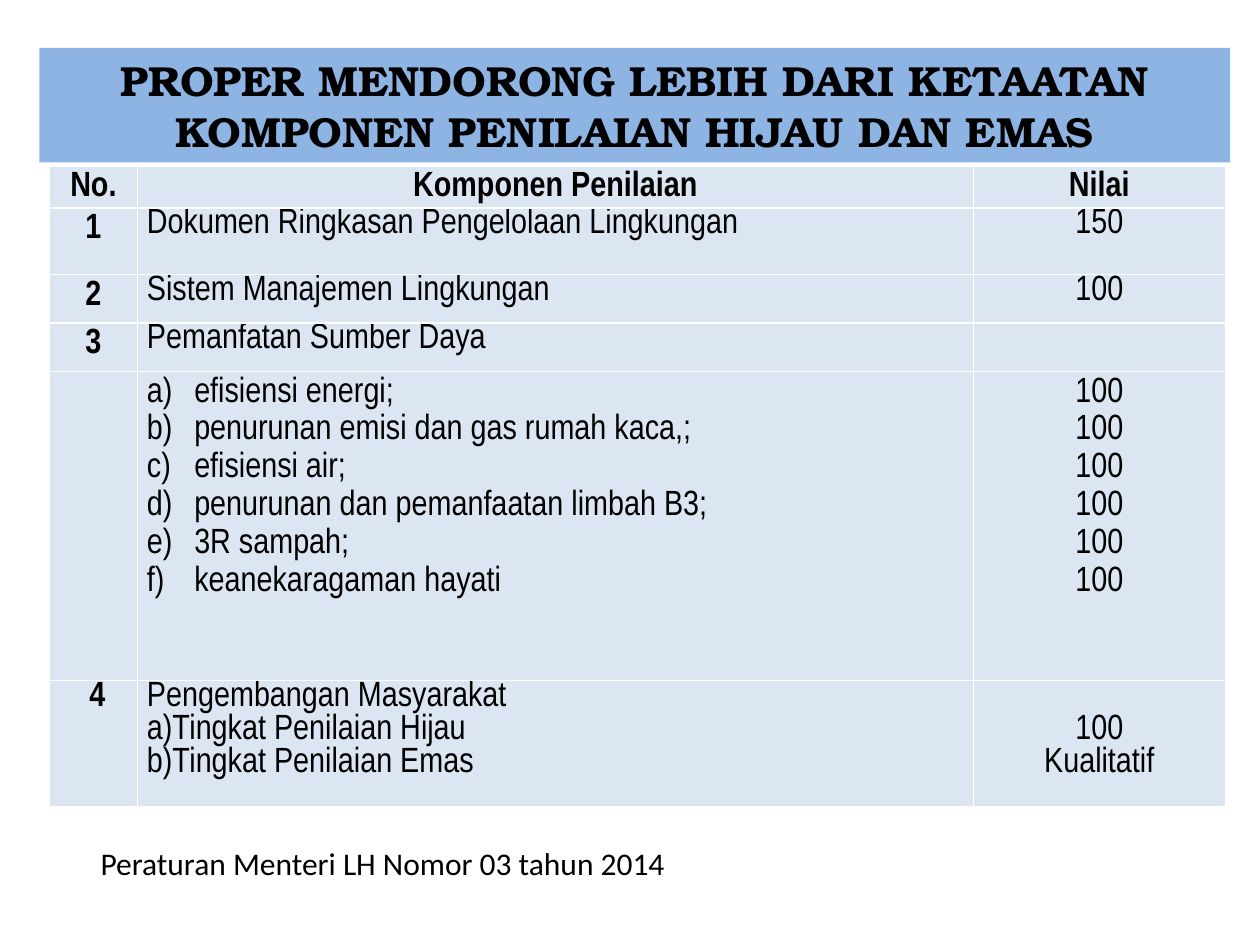
from lxml import etree
from pptx import Presentation
from pptx import util as u
from pptx.dml import color
from pptx.enum import text
from pptx.oxml import ns

Pt = u.Pt
ALIGN = text.PP_ALIGN


def paint(target, code):
    if hasattr(target, "solid"):
        target.solid()
        target.fore_color.rgb = color.RGBColor.from_string(code)
    else:
        target.rgb = color.RGBColor.from_string(code)


def write(frame, lines, font, size, bold=False, align=None, spacing=None, numbered=(), indent=0):
    for index, line in enumerate(lines):
        para = frame.paragraphs[0] if index == 0 else frame.add_paragraph()
        para.alignment = align
        para.line_spacing = spacing
        if index in numbered:
            props = para._p.get_or_add_pPr()
            props.set("marL", str(Pt(indent)))
            props.set("indent", str(-Pt(indent)))
            etree.SubElement(props, ns.qn("a:buFont"), typeface="+mj-lt")
            etree.SubElement(props, ns.qn("a:buAutoNum"), type="alphaLcParenR")
        span = para.add_run()
        span.text = line
        span.font.name = font
        span.font.size = Pt(size)
        span.font.bold = bold
        paint(span.font.color, "000000")


deck = Presentation()
deck.slide_width, deck.slide_height = Pt(720), Pt(540)
page = deck.slides.add_slide(deck.slide_layouts[5])

title = page.shapes.title
title.left, title.top, title.width, title.height = Pt(22.5), Pt(27.4), Pt(680.4), Pt(65.4)
paint(title.fill, "8EB4E3")
title.text_frame.auto_size = text.MSO_AUTO_SIZE.NONE
title.text_frame.vertical_anchor = text.MSO_ANCHOR.MIDDLE
write(title.text_frame,
      ["PROPER MENDORONG LEBIH DARI KETAATAN", "KOMPONEN PENILAIAN HIJAU DAN EMAS"],
      "TeX Gyre Bonum", 24, True, ALIGN.CENTER)

widths = [50.4, 477.6, 144]
heights = [23.8, 38, 27.6, 27.8, 176.6, 72]
resources = ["efisiensi energi;", "penurunan emisi dan gas rumah kaca,;", "efisiensi air;",
             "penurunan dan pemanfaatan limbah B3;", "3R sampah;", "keanekaragaman hayati"]
community = ["Pengembangan Masyarakat", "Tingkat Penilaian Hijau", "Tingkat Penilaian Emas"]
rows = [
    [["No."], ["Komponen Penilaian"], ["Nilai"]],
    [["1"], ["Dokumen Ringkasan Pengelolaan Lingkungan"], ["150"]],
    [["2"], ["Sistem Manajemen Lingkungan"], ["100"]],
    [["3"], ["Pemanfatan Sumber Daya"], []],
    [[], resources, ["100"] * len(resources)],
    [[" 4"], community, ["100", "Kualitatif"]],
]
HEADER, RESOURCES, COMMUNITY = 0, 4, 5
numbering = {RESOURCES: (range(6), 27), COMMUNITY: (range(1, 3), 0)}

table = page.shapes.add_table(len(rows), len(widths), Pt(28.2), Pt(95.2),
                              Pt(sum(widths)), Pt(sum(heights))).table
table.horz_banding = False
for column, width in zip(table.columns, widths):
    column.width = Pt(width)
for r, (row, height) in enumerate(zip(rows, heights)):
    table.rows[r].height = Pt(height)
    for c, lines in enumerate(row):
        cell = table.cell(r, c)
        paint(cell.fill, "DCE6F2")
        cell.margin_left = cell.margin_right = Pt(5.4)
        cell.margin_top = cell.margin_bottom = 0
        if r == HEADER:
            cell.vertical_anchor = text.MSO_ANCHOR.MIDDLE
        loose = r == RESOURCES or (c == 0 and HEADER < r < RESOURCES)
        body = c == 1 and r != HEADER
        numbered, indent = numbering.get(r, ((), 0)) if body else ((), 0)
        write(cell.text_frame, lines, "Arial Narrow", 20, r == HEADER or c == 0,
              ALIGN.JUSTIFY if body else ALIGN.CENTER, 1.15 if loose else None, numbered, indent)
table.cell(COMMUNITY, 2).margin_top = Pt(18.8)

source = page.shapes.add_textbox(Pt(50.4), Pt(478.8), Pt(388), Pt(29))
source.text_frame.word_wrap = True
write(source.text_frame, ["Peraturan Menteri LH Nomor 03 tahun 2014"], "Calibri", 18)

deck.save("out.pptx")
